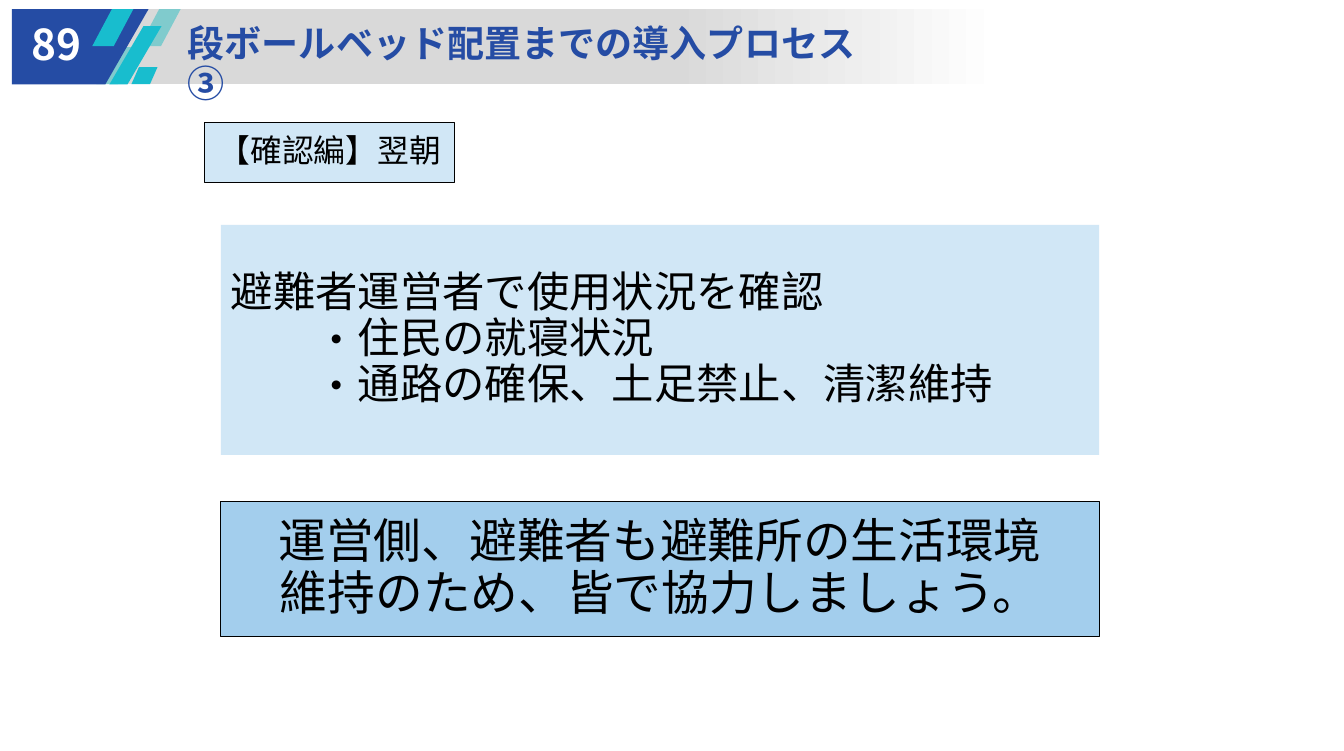
import pptx
import pptx.util
import pptx.dml.color
import pptx.enum.shapes
import pptx.enum.text
import pptx.oxml
import pptx.oxml.ns
from lxml import etree

Pt = pptx.util.Pt
SHAPE = pptx.enum.shapes.MSO_SHAPE
ALIGN = pptx.enum.text.PP_ALIGN
ANCHOR = pptx.enum.text.MSO_ANCHOR
qn = pptx.oxml.ns.qn

FONT = "Noto Sans CJK JP"
COLORS = {
    "navy": "254CA4",
    "cyan": "18BDCE",
    "teal": "80CBCD",
    "grey": "D9D9D9",
    "white": "FFFFFF",
    "black": "000000",
    "pale": "D1E7F6",
    "sky": "A3CEED",
}
LEFT, TOP = 8.6, 6.5
STRIPES = [
    ("cyan", 66.2, TOP, 29.5, 26.6, 0.53),
    ("cyan", 94.3, 48.2, 18.7, 12.2, 0.442),
    ("teal", 100.1, TOP, 29.5, 26.6, 0.53),
    ("cyan", 78.5, 18.7, 37.4, 41.8, 0.653),
]


def rgb(name):
    return pptx.dml.color.RGBColor.from_string(COLORS[name])


def paint(sp, fill, line=None):
    sp.fill.solid()
    sp.fill.fore_color.rgb = rgb(fill)
    if line:
        sp.line.color.rgb = rgb(line)
        sp.line.width = Pt(0.75)
    else:
        sp.line.fill.background()


def place(sp, left, top, width, height):
    sp.left, sp.top, sp.width, sp.height = map(Pt, (left, top, width, height))


def add_block(s, kind, box, fill, line=None):
    sp = s.shapes.add_shape(kind, *map(Pt, box))
    sp.shadow.inherit = False
    paint(sp, fill, line)
    return sp


def add_stripe(s, fill, left, top, width, height, slant):
    sp = add_block(s, SHAPE.PARALLELOGRAM, (left, top, width, height), fill)
    sp.adjustments[0] = slant


def add_banner(s):
    sp = add_block(s, SHAPE.RECTANGLE, (LEFT, TOP, 946.1, 54), "grey")
    sp.fill.gradient()
    sp.fill.gradient_angle = 0
    stops = sp.element.spPr.find(qn("a:gradFill")).find(qn("a:gsLst"))
    for gs in list(stops):
        stops.remove(gs)
    for pos, name in ((1, "grey"), (50, "grey"), (75, "white"), (100, "white")):
        gs = etree.SubElement(stops, qn("a:gs"), pos=str(pos * 1000))
        etree.SubElement(gs, qn("a:srgbClr"), val=COLORS[name])


def add_number_plate(s):
    fb = s.shapes.build_freeform(Pt(LEFT), Pt(TOP), scale=1.0)
    points = [(106.6, TOP), (75.6, 60.5), (LEFT, 60.5)]
    fb.add_line_segments([(Pt(x), Pt(y)) for x, y in points], close=True)
    sp = fb.convert_to_shape()
    sp.shadow.inherit = False
    paint(sp, "navy")


def set_bullet(p, size, char):
    pPr = p._p.get_or_add_pPr()
    if char:
        pPr.set("marL", str(Pt(size * 3)))
        pPr.set("indent", str(-Pt(size)))
        etree.SubElement(pPr, qn("a:buFont"), typeface=FONT)
        etree.SubElement(pPr, qn("a:buChar"), char=char)
    else:
        pPr.set("marL", "0")
        pPr.set("indent", "0")
        etree.SubElement(pPr, qn("a:buNone"))


def write(sp, text, size, color="black", bold=False, align=ALIGN.CENTER,
          anchor=ANCHOR.MIDDLE, inset=(5, 3), wrap=True, bullet=None):
    tf = sp.text_frame
    tf.auto_size = pptx.enum.text.MSO_AUTO_SIZE.NONE
    tf.word_wrap = wrap
    tf.vertical_anchor = anchor
    tf.margin_left = tf.margin_right = Pt(inset[0])
    tf.margin_top = tf.margin_bottom = Pt(inset[1])
    for i, line in enumerate(text.split("\n")):
        p = tf.add_paragraph() if i else tf.paragraphs[0]
        set_bullet(p, size, bullet if i else None)
        p.alignment = align
        p.line_spacing = 0.9
        p.space_before = Pt(0)
        r = p.add_run()
        r.text = line
        r.font.size = Pt(size)
        r.font.bold = bold
        r.font.color.rgb = rgb(color)
        r.font.name = FONT
        etree.SubElement(r._r.get_or_add_rPr(), qn("a:ea"), typeface=FONT)


def bring_to_front(sp):
    sp.element.getparent().append(sp.element)


def main():
    prs = pptx.Presentation()
    prs.slide_width, prs.slide_height = Pt(964.1), Pt(538.6)
    s = prs.slides.add_slide(prs.slide_layouts[1])
    title, checks = s.placeholders

    add_banner(s)
    add_stripe(s, "teal", 69.1, 33.8, 29.5, 26.6, 0.53)
    add_number_plate(s)
    for stripe in STRIPES:
        add_stripe(s, *stripe)

    place(title, 134.6, 18, 504, 29.5)
    write(title, "段ボールベッド配置までの導入プロセス③", 26.6, color="navy",
          bold=True, align=ALIGN.LEFT, anchor=ANCHOR.TOP, inset=(0, 0))
    bring_to_front(title)

    number = s.shapes.add_textbox(*map(Pt, (17.3, 15.1, 46.8, 37.4)))
    write(number, "89", 30.4, color="white", bold=True, inset=(0, 0), wrap=False)

    place(checks, 158.4, 161.3, 630, 164.9)
    paint(checks, "pale")
    write(checks, "避難者運営者で使用状況を確認\n住民の就寝状況\n通路の確保、土足禁止、清潔維持",
          30.4, align=ALIGN.LEFT, inset=(7.2, 3.6), bullet="・")
    bring_to_front(checks)

    message = add_block(s, SHAPE.RECTANGLE, (158.4, 360, 630, 96.5), "sky", "black")
    write(message, "運営側、避難者も避難所の生活環境\n維持のため、皆で協力しましょう。", 34.2)

    tag = add_block(s, SHAPE.RECTANGLE, (146.9, 87.8, 179.3, 43.2), "pale", "black")
    write(tag, "【確認編】翌朝", 22.8)

    prs.save("out.pptx")


if __name__ == "__main__":
    main()
